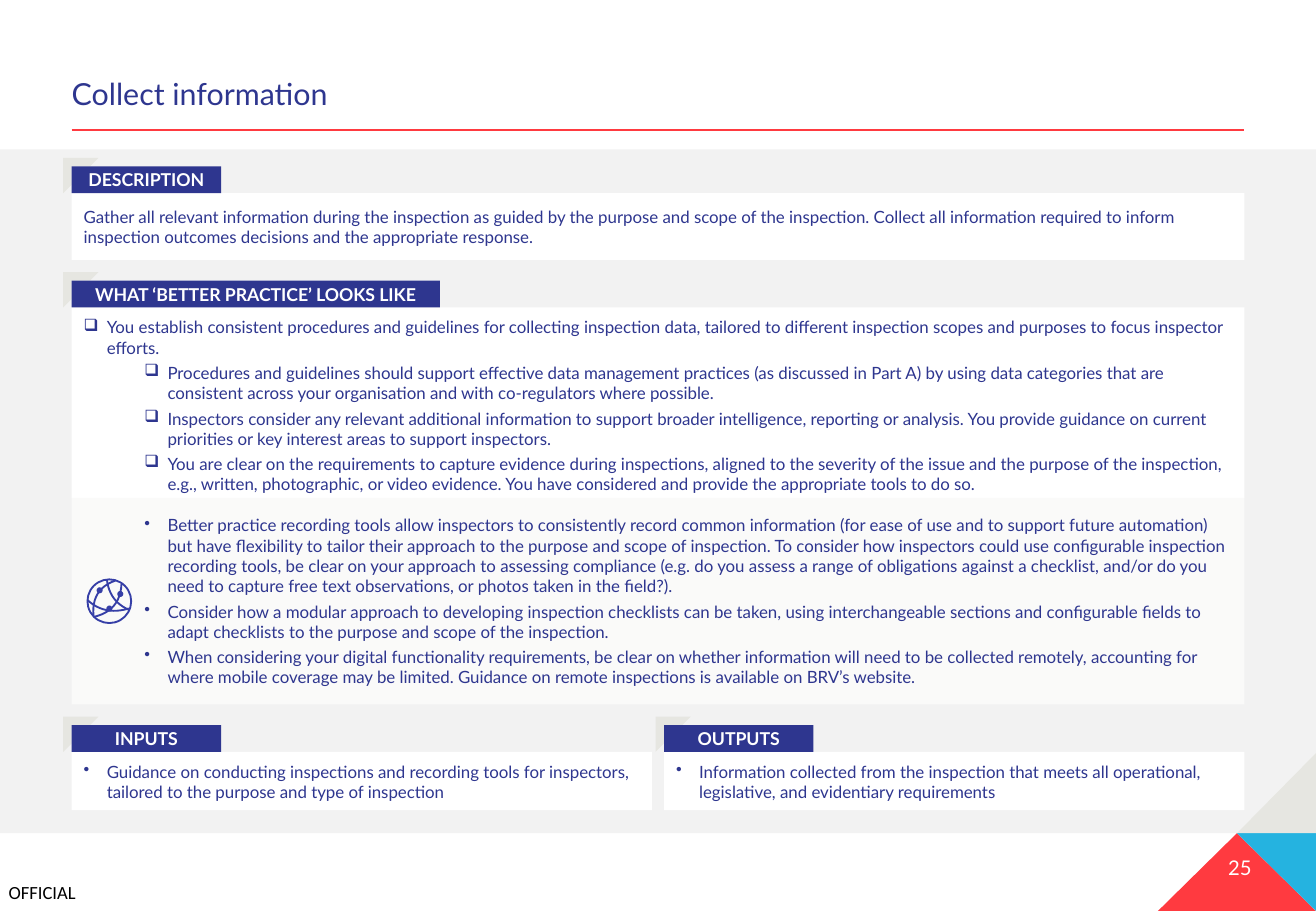
from lxml import etree
from pptx import Presentation
from pptx.dml.color import RGBColor
from pptx.enum.shapes import MSO_CONNECTOR, MSO_SHAPE
from pptx.enum.text import MSO_ANCHOR as ANCHOR, PP_ALIGN as ALIGN
from pptx.oxml.ns import qn
from pptx.util import Inches, Pt

NAVY, RED, BLUE, STONE, WHITE = "2E368F", "FF3A40", "25B3E0", "E6E6E1", "FFFFFF"
GLOBE = "363FA7"
WIDTH, HEIGHT = 10.83, 7.5
LEFT, FULL = 0.59, 9.65          # content column
GUTTER = 0.1
HALF = (FULL - GUTTER) / 2       # two equal columns
TAG_HEIGHT, NOTCH, NOTCH_OUT = 0.22, 0.29, 0.07
FOOT = 6.86                      # bottom of the grey band
HANG = 0.19


def paint(fill, colour):
    fill.solid()
    fill.fore_color.rgb = RGBColor.from_string(colour)


def write(shape, items, size, colour, insets=(0.1, 0.05, 0.1, 0.05),
          anchor=ANCHOR.TOP, align=ALIGN.LEFT, bold=False, font="Lato", after=0):
    """Fill a shape with paragraphs; each item is (bullet, left margin, text)."""
    frame = shape.text_frame
    frame.word_wrap = True
    frame.vertical_anchor = anchor
    (frame.margin_left, frame.margin_top,
     frame.margin_right, frame.margin_bottom) = map(Inches, insets)
    for number, (bullet, margin, text) in enumerate(items):
        para = frame.add_paragraph() if number else frame.paragraphs[0]
        para.text = text
        para.alignment = align
        para.space_after = Pt(after)
        if bullet:
            props = para._p.get_or_add_pPr()
            props.set("marL", str(Inches(margin)))
            props.set("indent", str(Inches(-HANG)))
            etree.SubElement(props, qn("a:buChar")).set("char", bullet)
        span = para.runs[0]
        span.font.size, span.font.name, span.font.bold = Pt(size), font, bold
        paint(span.font.fill, colour)


deck = Presentation()
deck.slide_width, deck.slide_height = Inches(WIDTH), Inches(HEIGHT)
page = deck.slides.add_slide(deck.slide_layouts[6])
shapes = page.shapes

# Grey band behind the content
band = shapes.add_shape(MSO_SHAPE.RECTANGLE, 0, Inches(1.23), Inches(WIDTH), Inches(FOOT - 1.23))
paint(band.fill, "F2F2F2")
band.line.fill.background()

# Corner triangles
CORNER = WIDTH - 0.65
for colour, points in [
    (RED, [(CORNER, FOOT), (CORNER - 0.65, HEIGHT), (WIDTH, HEIGHT)]),
    (BLUE, [(WIDTH, FOOT), (CORNER, FOOT), (WIDTH, HEIGHT)]),
    (STONE, [(WIDTH, FOOT - 0.66), (CORNER, FOOT), (WIDTH, FOOT)]),
]:
    outline = [(Inches(x), Inches(y)) for x, y in points]
    builder = shapes.build_freeform(*outline[0])
    builder.add_line_segments(outline[1:], close=True)
    triangle = builder.convert_to_shape()
    paint(triangle.fill, colour)
    triangle.line.fill.background()

# Title, page number and marking
title = shapes.add_textbox(Inches(LEFT), Inches(0.59), Inches(FULL), Inches(0.38))
write(title, [("", 0, "Collect information")], 18, NAVY, (0, 0.05, 0, 0.05), ANCHOR.BOTTOM)
title.text_frame.paragraphs[0].line_spacing = 0.9
number_box = shapes.add_textbox(Inches(9.43), Inches(6.99), Inches(0.87), Inches(0.3))
write(number_box, [("", 0, "25")], 12, WHITE, (0, 0.05, 0, 0.05), align=ALIGN.RIGHT)
marking = shapes.add_textbox(Inches(0.07), Inches(7.25), Inches(0.59), Inches(0.18))
write(marking, [("", 0, "OFFICIAL")], 11, "000000", (0, 0, 0, 0), font="Calibri")
marking.text_frame.word_wrap = False

# Rule under the title
rule = shapes.add_connector(MSO_CONNECTOR.STRAIGHT, Inches(LEFT), Inches(1.07),
                            Inches(LEFT + FULL), Inches(1.07))
paint(rule.line.fill, RED)
rule.line.width = Pt(1.25)
etree.SubElement(rule._element.spPr, qn("a:effectLst"))

# Sections: heading, tag width, left, top, width, height, fill, insets, anchor, items
BOX, DOT, INNER = "❑", "•", 0.69
PADDED = (0.1, 0.08, 0.1, 0.08)
sections = [
    ("DESCRIPTION", 1.23, LEFT, 1.59, FULL, 0.55, WHITE, (0.1, 0.05, 0.1, 0.05), ANCHOR.MIDDLE, [
        ("", 0, "Gather all relevant information during the inspection as guided by the purpose and scope of the inspection. Collect all information required to inform inspection outcomes decisions and the appropriate response."),
    ]),
    ("WHAT ‘BETTER PRACTICE’ LOOKS LIKE", 3.03, LEFT, 2.53, FULL, 1.57, WHITE, PADDED, ANCHOR.TOP, [
        (BOX, HANG, "You establish consistent procedures and guidelines for collecting inspection data, tailored to different inspection scopes and purposes to focus inspector efforts."),
        (BOX, INNER, "Procedures and guidelines should support effective data management practices (as discussed in Part A) by using data categories that are consistent across your organisation and with co-regulators where possible."),
        (BOX, INNER, "Inspectors consider any relevant additional information to support broader intelligence, reporting or analysis. You provide guidance on current priorities or key interest areas to support inspectors."),
        (BOX, INNER, "You are clear on the requirements to capture evidence during inspections, aligned to the severity of the issue and the purpose of the inspection, e.g., written, photographic, or video evidence. You have considered and provide the appropriate tools to do so."),
    ]),
    ("", 0, LEFT, 4.1, FULL, 1.7, "FAFAF9", (0.1, 0.08, 0.08, 0.08), ANCHOR.MIDDLE, [
        (DOT, INNER, "Better practice recording tools allow inspectors to consistently record common information (for ease of use and to support future automation) but have flexibility to tailor their approach to the purpose and scope of inspection. To consider how inspectors could use configurable inspection recording tools, be clear on your approach to assessing compliance (e.g. do you assess a range of obligations against a checklist, and/or do you need to capture free text observations, or photos taken in the field?)."),
        (DOT, INNER, "Consider how a modular approach to developing inspection checklists can be taken, using interchangeable sections and configurable fields to adapt checklists to the purpose and scope of the inspection."),
        (DOT, INNER, "When considering your digital functionality requirements, be clear on whether information will need to be collected remotely, accounting for where mobile coverage may be limited. Guidance on remote inspections is available on BRV’s website."),
    ]),
    ("INPUTS", 1.23, LEFT, 6.19, HALF, 0.48, WHITE, PADDED, ANCHOR.TOP, [
        (DOT, HANG, "Guidance on conducting inspections and recording tools for inspectors, tailored to the purpose and type of inspection"),
    ]),
    ("OUTPUTS", 1.23, LEFT + HALF + GUTTER, 6.19, HALF, 0.48, WHITE, PADDED, ANCHOR.TOP, [
        (DOT, HANG, "Information collected from the inspection that meets all operational, legislative, and evidentiary requirements"),
    ]),
]
for heading, tag_width, left, top, width, height, fill, insets, anchor, items in sections:
    parts = [(MSO_SHAPE.RECTANGLE, left, top, width, height, fill)]
    if heading:
        parts += [
            (MSO_SHAPE.HALF_FRAME, left - NOTCH_OUT, top - NOTCH, NOTCH, NOTCH, STONE),
            (MSO_SHAPE.RECTANGLE, left, top - TAG_HEIGHT, tag_width, TAG_HEIGHT, NAVY),
        ]
    drawn = []
    for kind, *place, colour in parts:
        shape = shapes.add_shape(kind, *map(Inches, place))
        paint(shape.fill, colour)
        shape.line.fill.background()
        drawn.append(shape)
    write(drawn[0], items, 10, NAVY, insets, anchor, after=3)
    if heading:
        drawn[1].adjustments[0] = drawn[1].adjustments[1] = 0.24
        write(drawn[2], [("", 0, heading)], 10.5, WHITE, anchor=ANCHOR.MIDDLE,
              align=ALIGN.CENTER, bold=True)

# Globe: ring, curved links (start, control, end) and nodes
ring = shapes.add_shape(MSO_SHAPE.OVAL, Inches(0.72), Inches(4.77), Inches(0.36), Inches(0.36))
ring.fill.background()
strokes = [ring]
STEPS = 12
for start, control, end in [
    ((0.88, 4.77), (0.9, 4.95), (1.06, 5.02)),
    ((0.72, 4.94), (0.86, 5.07), (1.06, 5.01)),
    ((0.77, 5.07), (0.75, 4.85), (0.95, 4.78)),
    ((1.0, 4.81), (0.99, 5.03), (0.77, 5.08)),
]:
    curve = []
    for step in range(STEPS + 1):
        t = step / STEPS
        curve.append([Inches((1 - t) ** 2 * a + 2 * t * (1 - t) * b + t ** 2 * c)
                      for a, b, c in zip(start, control, end)])
    builder = shapes.build_freeform(*curve[0])
    builder.add_line_segments(curve[1:], close=False)
    link = builder.convert_to_shape()
    link.fill.background()
    strokes.append(link)
for stroke in strokes:
    paint(stroke.line.fill, GLOBE)
    stroke.line.width = Pt(1.1)
NODE = 0.05
for x, y in [(0.82, 4.86), (0.99, 4.89), (0.9, 5.01)]:
    node = shapes.add_shape(MSO_SHAPE.OVAL, Inches(x - NODE / 2), Inches(y - NODE / 2),
                            Inches(NODE), Inches(NODE))
    paint(node.fill, GLOBE)
    node.line.fill.background()

# No shadows
for shape in shapes:
    if shape != rule:
        if hasattr(shape, "shadow"):
            shape.shadow.inherit = False

deck.save("out.pptx")
